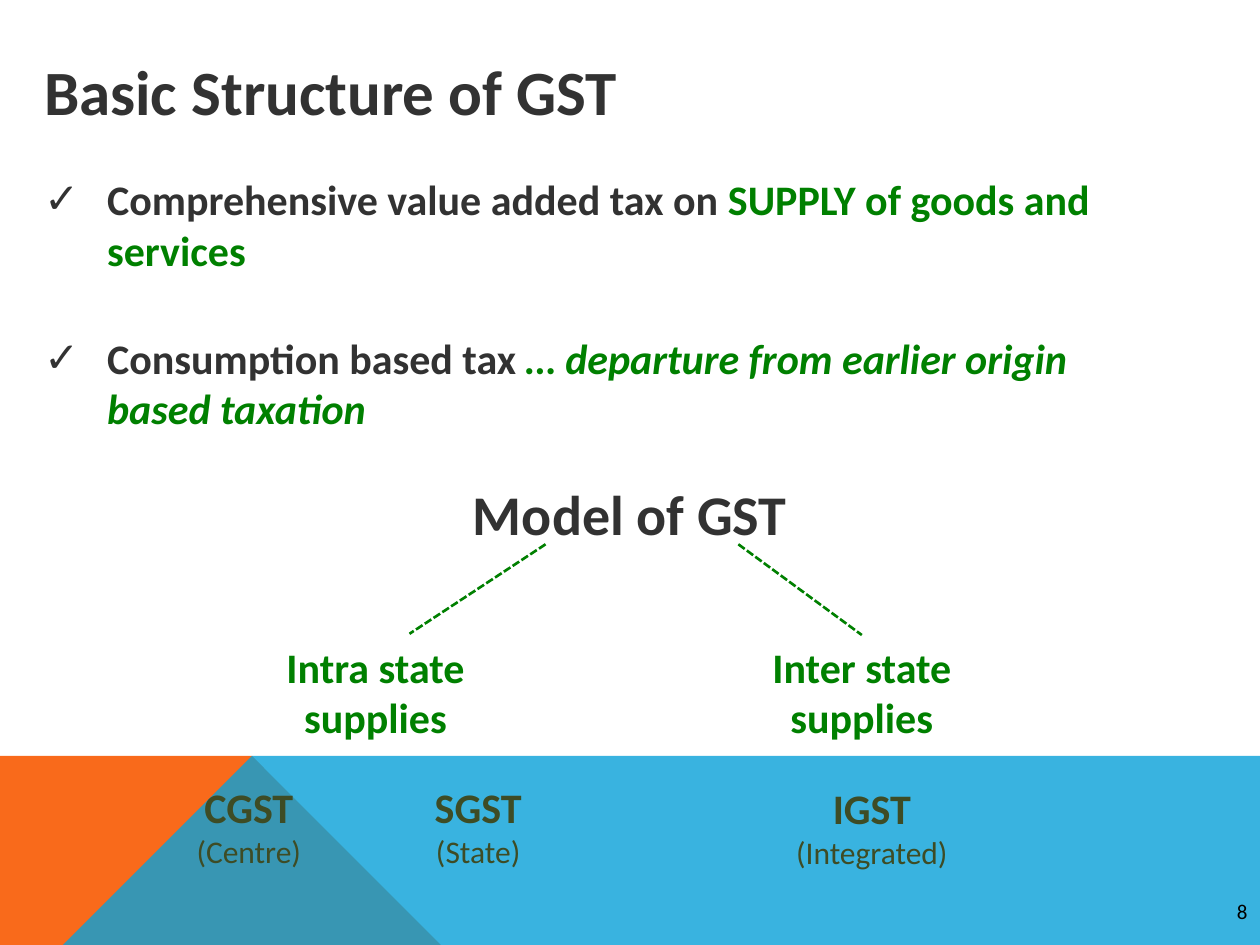
from dataclasses import dataclass
from typing import Optional

from lxml.etree import SubElement
from pptx import Presentation
from pptx.dml.color import RGBColor
from pptx.enum.dml import MSO_LINE_DASH_STYLE as Dash
from pptx.enum.shapes import MSO_CONNECTOR
from pptx.enum.text import MSO_ANCHOR, MSO_AUTO_SIZE, PP_ALIGN as Align
from pptx.oxml.ns import qn
from pptx.util import Inches, Pt

COLORS = {"dark": "323232", "green": "008000", "olive": "3E4C25",
          "orange": "F96A1B", "blue": "08A1D9", "black": "000000"}
FONT = "Calibri"


@dataclass
class Line:
    text: str
    size: int
    color: str
    bold: bool = True


@dataclass
class Label:
    box: tuple[float, float, float, float]
    lines: list[Line]
    align: Align = Align.CENTER
    space_before: float = 0


@dataclass
class Bullet:
    lead: str
    emphasis: str
    italic: bool
    space_before: float


@dataclass
class Band:
    points: list[tuple[float, float]]
    color: str
    opacity: int = 100


@dataclass
class Branch:
    start: tuple[float, float]
    end: tuple[float, float]
    target: Optional[str] = None


def tax_label(box, name: str, note: str) -> Label:
    return Label(box, [Line(name, 24, "olive"), Line(note, 18, "olive", False)])


BANDS = [
    Band([(0, 7.5), (0, 5.52), (2.23, 5.52), (3.91, 7.5)], "orange"),
    Band([(0, 7.5), (2.23, 5.52), (10, 5.53), (10, 7.5)], "blue", 80),
]
BULLETS = [
    Bullet("Comprehensive value added tax on ", "SUPPLY of goods and services", False, 4.8),
    Bullet("Consumption based tax ", "… departure from earlier origin based taxation", True, 33),
]
LABELS = [
    Label((8.58, 7.08, 1.42, 0.3), [Line("8", 12, "black", False)], Align.RIGHT),
    Label((0, 3.76, 10, 0.64), [Line("Model of GST", 32, "dark")], space_before=6.4),
    Label((1.97, 5.04, 2.02, 0.91), [Line("Intra state supplies", 24, "green")]),
    Label((5.83, 5.04, 2.02, 0.91), [Line("Inter state supplies", 24, "green")]),
    tax_label((1.37, 6.15, 1.21, 0.81), "CGST", "(Centre)"),
    tax_label((3.29, 6.15, 1.01, 0.81), "SGST", "(State)"),
    tax_label((6.2, 6.16, 1.44, 0.81), "IGST", "(Integrated)"),
]
BRANCHES = [
    Branch((4.33, 4.32), (3.25, 5.03)),
    Branch((5.86, 4.32), (6.84, 5.04), "Inter state supplies"),
]


def rgb(name: str) -> RGBColor:
    return RGBColor.from_string(COLORS[name])


def style_run(r, size: int, color: str, bold: bool = True, italic: bool = False) -> None:
    r.font.name, r.font.size = FONT, Pt(size)
    r.font.bold, r.font.italic = bold, italic
    r.font.color.rgb = rgb(color)


def place(sp, box) -> None:
    sp.left, sp.top, sp.width, sp.height = map(Inches, box)


def prepare_frame(tf) -> None:
    tf.word_wrap = True
    tf.auto_size = MSO_AUTO_SIZE.NONE
    tf.vertical_anchor = MSO_ANCHOR.TOP


def draw_band(s, band: Band) -> None:
    builder = s.shapes.build_freeform(*band.points[0], scale=Inches(1))
    builder.add_line_segments(band.points[1:], close=True)
    sp = builder.convert_to_shape()
    sp.shadow.inherit = False
    sp.fill.solid()
    sp.fill.fore_color.rgb = rgb(band.color)
    sp.line.fill.background()
    if band.opacity < 100:
        color = sp._element.spPr.find(f"{qn('a:solidFill')}/{qn('a:srgbClr')}")
        SubElement(color, qn("a:alpha"), val=str(band.opacity * 1000))


def write_title(sp, text: str) -> None:
    place(sp, (0.25, 0.37, 8.67, 0.71))
    prepare_frame(sp.text_frame)
    sp.text_frame.text = text
    p = sp.text_frame.paragraphs[0]
    p.alignment, p.space_before = Align.LEFT, Pt(7.2)
    style_run(p.runs[0], 36, "dark")


def write_bullets(sp, bullets: list[Bullet]) -> None:
    place(sp, (0.25, 1.33, 8.67, 2.28))
    tf = sp.text_frame
    prepare_frame(tf)
    for i, bullet in enumerate(bullets):
        p = tf.add_paragraph() if i else tf.paragraphs[0]
        p.space_before = Pt(bullet.space_before)
        pPr = p._p.get_or_add_pPr()
        pPr.set("marL", str(Inches(0.5)))
        pPr.set("indent", str(-Inches(0.5)))
        SubElement(pPr, qn("a:buChar"), char="✓")
        for text, color, italic in ((bullet.lead, "dark", False),
                                    (bullet.emphasis, "green", bullet.italic)):
            r = p.add_run()
            r.text = text
            style_run(r, 24, color, italic=italic)


def draw_label(s, label: Label):
    sp = s.shapes.add_textbox(*map(Inches, label.box))
    tf = sp.text_frame
    prepare_frame(tf)
    tf.text = "\n".join(line.text for line in label.lines)
    for p, line in zip(tf.paragraphs, label.lines):
        p.alignment, p.space_before = label.align, Pt(label.space_before)
        style_run(p.runs[0], line.size, line.color, line.bold)
    return sp


def draw_branch(s, branch: Branch, labels: dict) -> None:
    line = s.shapes.add_connector(
        MSO_CONNECTOR.STRAIGHT, *map(Inches, branch.start + branch.end))
    if branch.target:
        line.end_connect(labels[branch.target], 0)
    line.line.color.rgb = rgb("green")
    line.line.width = Pt(1.5)
    line.line.dash_style = Dash.SQUARE_DOT
    SubElement(line._element.spPr, qn("a:effectLst"))


def main() -> None:
    prs = Presentation()
    prs.slide_width, prs.slide_height = Inches(10), Inches(7.5)
    s = prs.slides.add_slide(prs.slide_layouts[1])
    for band in BANDS:
        draw_band(s, band)
    write_title(s.shapes.title, "Basic Structure of GST")
    write_bullets(s.placeholders[1], BULLETS)
    labels = {label.lines[0].text: draw_label(s, label) for label in LABELS}
    for branch in BRANCHES:
        draw_branch(s, branch, labels)
    prs.save("out.pptx")


if __name__ == "__main__":
    main()
